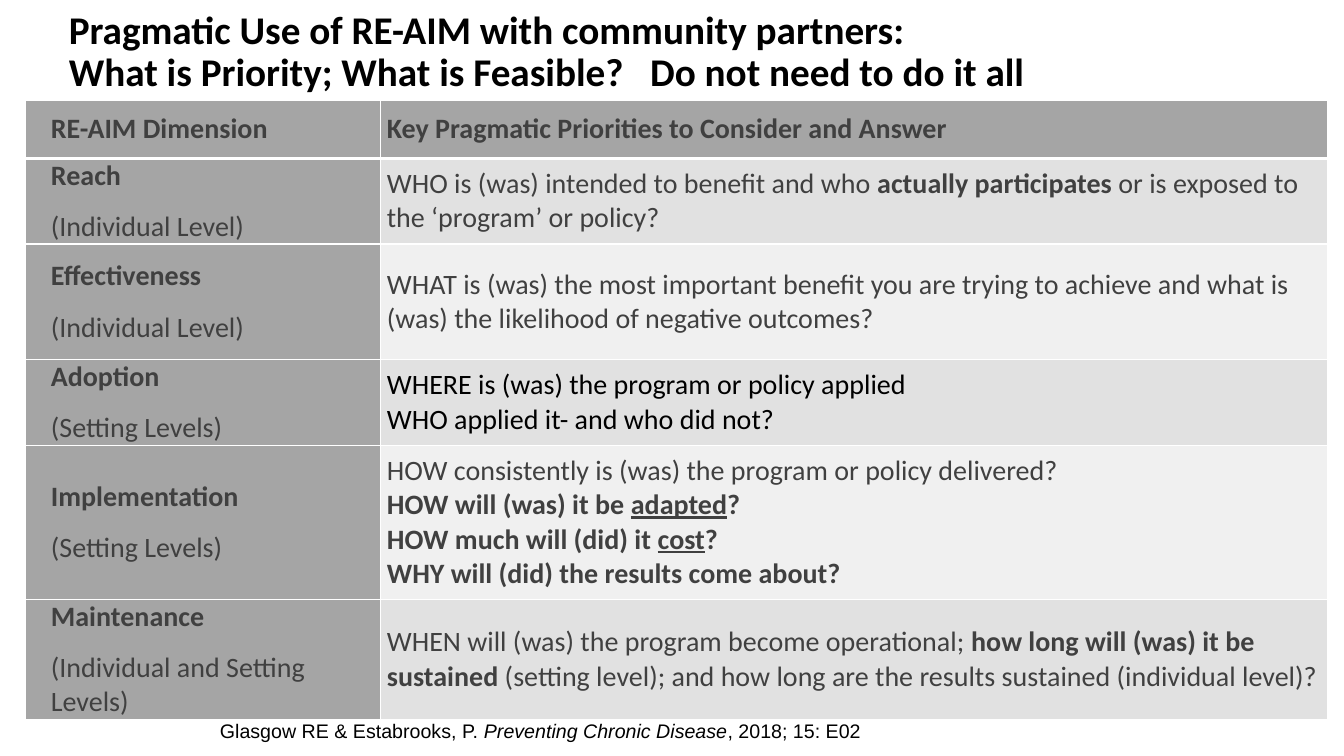
import lxml.etree
import pptx
import pptx.dml.color
import pptx.enum.text
import pptx.oxml.ns
import pptx.util

Pt = pptx.util.Pt
RGBColor = pptx.dml.color.RGBColor
ALIGN = pptx.enum.text.PP_ALIGN
ANCHOR = pptx.enum.text.MSO_ANCHOR
AUTO_SIZE = pptx.enum.text.MSO_AUTO_SIZE

BLACK = RGBColor(0x00, 0x00, 0x00)
WHITE = RGBColor(0xFF, 0xFF, 0xFF)
CHARCOAL = RGBColor(0x40, 0x40, 0x40)
GRAY = RGBColor(0xA5, 0xA5, 0xA5)
BANDS = (RGBColor(0xE1, 0xE1, 0xE1), RGBColor(0xF0, 0xF0, 0xF0))

TITLE = (
    "Pragmatic Use of RE-AIM with community partners:\n"
    "What is Priority; What is Feasible?   Do not need to do it all"
)
HEADINGS = ("RE-AIM Dimension", "Key Pragmatic Priorities to Consider and Answer")
COLUMN_WIDTHS = (253.5, 676.5)
HEADER_HEIGHT = 41.76

# Each dimension: name, level, row height, text color, space after, answer paragraphs.
DIMENSIONS = (
    ("Reach", "(Individual Level)", 55.44, CHARCOAL, 12, (
        (("WHO is (was) intended to benefit and who ", ""),
         ("actually participates ", "b"),
         ("or is exposed to the ‘program’ or policy?", "")),
    )),
    ("Effectiveness", "(Individual Level)", 82.8, CHARCOAL, 0, (
        (("WHAT is (was) the most important benefit you are trying to achieve "
          "and what is (was) the likelihood of negative outcomes?", ""),),
    )),
    ("Adoption", "(Setting Levels)", 55.44, BLACK, 0, (
        (("WHERE is (was) the program or policy applied", ""),),
        (("WHO applied it- and who did not?", ""),),
    )),
    ("Implementation", "(Setting Levels)", 110.16, CHARCOAL, 0, (
        (("HOW consistently is (was) the program or policy delivered?", ""),),
        (("HOW will (was) it be ", "b"), ("adapted", "bu"), ("?", "b")),
        (("HOW much will (did) it ", "b"), ("cost", "bu"), ("?", "b")),
        (("WHY will (did) the results come about?", "b"),),
    )),
    ("Maintenance", "(Individual and Setting Levels)", 82.8, CHARCOAL, 12, (
        (("WHEN will (was) the program become operational; ", ""),
         ("how long will (was) it be sustained", "b"),
         (" (setting level); and how long are the results sustained "
          "(individual level)?", "")),
    )),
)

CITATION = (
    ("Glasgow RE & Estabrooks, P. ", ""),
    ("Preventing Chronic Disease", "i"),
    (", 2018; 15: E02", ""),
)


def add_runs(para, pieces, font_name, size, color):
    for text, style in pieces:
        span = para.add_run()
        span.text = text
        span.font.name = font_name
        span.font.size = Pt(size)
        span.font.color.rgb = color
        span.font.bold = "b" in style
        span.font.italic = "i" in style
        span.font.underline = "u" in style


def set_borders(cell, top, bottom):
    properties = cell._tc.get_or_add_tcPr()
    sides = (("lnL", 1), ("lnR", 1), ("lnT", top), ("lnB", bottom))
    for position, (side, width) in enumerate(sides):
        line = lxml.etree.Element(pptx.oxml.ns.qn("a:" + side), w=str(Pt(width)))
        fill = lxml.etree.SubElement(line, pptx.oxml.ns.qn("a:solidFill"))
        lxml.etree.SubElement(fill, pptx.oxml.ns.qn("a:srgbClr"), val=str(WHITE))
        properties.insert(position, line)


def fill_cell(cell, paragraphs, fill, color=CHARCOAL, indent=0, space_after=0):
    cell.fill.solid()
    cell.fill.fore_color.rgb = fill
    cell.vertical_anchor = ANCHOR.MIDDLE
    cell.margin_left = cell.margin_right = Pt(4.5)
    cell.margin_top = cell.margin_bottom = Pt(0)
    frame = cell.text_frame
    for number, pieces in enumerate(paragraphs):
        para = frame.add_paragraph() if number else frame.paragraphs[0]
        para.space_after = Pt(space_after)
        if indent:
            para._p.get_or_add_pPr().set("marL", str(Pt(indent)))
        add_runs(para, pieces, "Calibri", 20, color)


def add_dimension_table(page):
    table = page.shapes.add_table(
        len(DIMENSIONS) + 1, len(HEADINGS), Pt(18.4), Pt(71.5), Pt(930), Pt(428.4)
    ).table
    for column, width in zip(table.columns, COLUMN_WIDTHS):
        column.width = Pt(width)

    table.rows[0].height = Pt(HEADER_HEIGHT)
    for column, heading in enumerate(HEADINGS):
        cell = table.cell(0, column)
        fill_cell(cell, (((heading, "b"),),), GRAY, indent=0 if column else 13.5)
        set_borders(cell, 1, 3)

    for row, dimension in enumerate(DIMENSIONS, start=1):
        name, level, height, color, space_after, answers = dimension
        table.rows[row].height = Pt(height)
        label = (((name, "b"),), ((level, ""),))
        fill_cell(table.cell(row, 0), label, GRAY, indent=13.5, space_after=12)
        fill_cell(table.cell(row, 1), answers, BANDS[(row - 1) % 2], color,
                  space_after=space_after)
        for column in range(len(HEADINGS)):
            set_borders(table.cell(row, column), 3 if row == 1 else 1, 1)


def place_title(page):
    title = page.shapes.title
    title.left, title.top, title.width, title.height = Pt(42), Pt(3.6), Pt(882), Pt(68.4)
    frame = title.text_frame
    frame.text = TITLE
    frame.word_wrap = True
    frame.auto_size = AUTO_SIZE.NONE
    frame.vertical_anchor = ANCHOR.MIDDLE
    for para in frame.paragraphs:
        para.alignment = ALIGN.LEFT
        para.line_spacing = 0.9
        for span in para.runs:
            span.font.name = "Calibri"
            span.font.size = Pt(28)
            span.font.bold = True
            span.font.color.rgb = BLACK


def add_citation(page):
    box = page.shapes.add_textbox(Pt(150), Pt(510), Pt(474), Pt(24.2))
    box.text_frame.word_wrap = True
    box.text_frame.auto_size = AUTO_SIZE.SHAPE_TO_FIT_TEXT
    add_runs(box.text_frame.paragraphs[0], CITATION, "Arial", 14, BLACK)


def main():
    deck = pptx.Presentation()
    deck.slide_width, deck.slide_height = Pt(960), Pt(540)
    page = deck.slides.add_slide(deck.slide_layouts.get_by_name("Title Only"))
    add_dimension_table(page)
    place_title(page)
    add_citation(page)
    deck.save("out.pptx")


if __name__ == "__main__":
    main()
